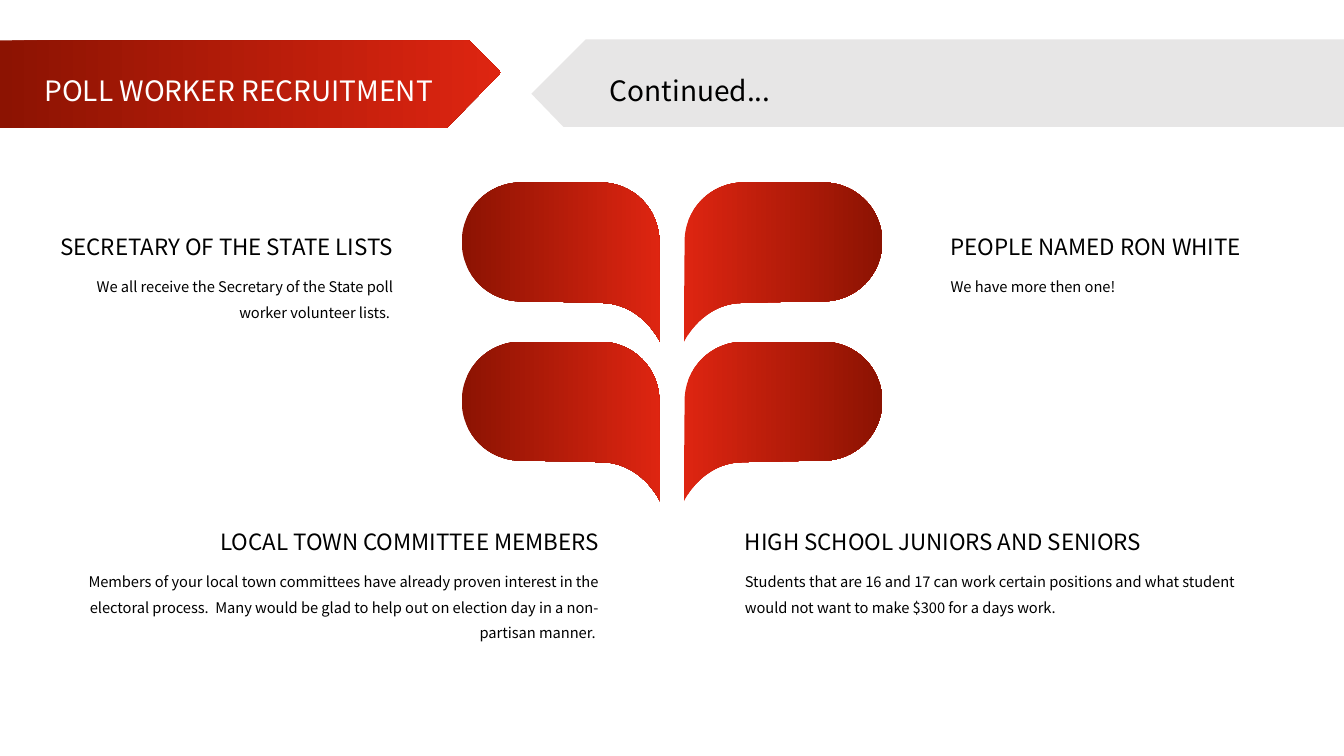
from pptx import Presentation
from pptx.dml.color import RGBColor
from pptx.enum.text import MSO_ANCHOR, MSO_AUTO_SIZE, PP_ALIGN
from pptx.oxml.ns import qn
from pptx.util import Pt
from lxml.etree import SubElement

PX = 9144  # 100 px to the inch
FONT = "Noto Sans CJK SC"
BLACK, WHITE, GREY = "000000", "FFFFFF", "E7E6E6"
DARK_RED, RED = "8C1302", "DE2511"

TITLE_BANNER = [(0, 40), (465, 40), (497, 72), (443, 127), (0, 127)]
SUBTITLE_BANNER = [(581, 39), (1333, 39), (1333, 126), (559, 126), (527, 93)]

PETAL_WIDTH = 197
PETAL_START = (59, 0)
# each curve: two control points and an end point
PETAL_CURVES = [
    [(137, 0), (137, 0), (137, 0)],
    [(170, 0), (196, 26), (196, 59)],
    [(196, 91), (197, 159), (197, 159)],
    [(197, 159), (182, 125), (146, 120)],
    [(141, 119), (59, 118), (59, 118)],
    [(26, 118), (0, 92), (0, 59)],
    [(0, 26), (26, 0), (59, 0)],
]

# side edge, top, heading width, body width, body lines, alignment, heading, body
CAPTIONS = [
    (400, 226, 360, 348, 2, PP_ALIGN.RIGHT, "SECRETARY OF THE STATE LISTS",
     "We all receive the Secretary of the State poll worker volunteer lists. "),
    (933, 226, 352, 322, 1, PP_ALIGN.LEFT, "PEOPLE NAMED RON WHITE",
     "We have more then one!"),
    (729, 519, 475, 526, 2, PP_ALIGN.LEFT, "HIGH SCHOOL JUNIORS AND SENIORS",
     "Students that are 16 and 17 can work certain positions and what student "
     "would not want to make $300 for a days work."),
    (604, 519, 463, 526, 3, PP_ALIGN.RIGHT, "LOCAL TOWN COMMITTEE MEMBERS",
     "Members of your local town committees have already proven interest in the "
     "electoral process.  Many would be glad to help out on election day in a "
     "non-partisan manner. "),
]


def color(value):
    return RGBColor.from_string(value)


def write(shape, box, text, size, ink=BLACK, align=PP_ALIGN.LEFT, spacing=1.0):
    """Place a text shape in its box and format its single paragraph."""
    shape.left, shape.top, shape.width, shape.height = (n * PX for n in box)
    frame = shape.text_frame
    frame.text = text
    frame.word_wrap = True
    frame.auto_size = MSO_AUTO_SIZE.NONE
    frame.vertical_anchor = MSO_ANCHOR.TOP
    para = frame.paragraphs[0]
    para.alignment = align
    para.line_spacing = spacing
    font = para.runs[0].font
    font.name, font.size = FONT, Pt(size)
    font.color.rgb = color(ink)


def add_text(page, box, text, size, **style):
    write(page.shapes.add_textbox(0, 0, 0, 0), box, text, size, **style)


def add_outline(page, points, *colors):
    """Draw a closed shape, filled plainly or with a left-to-right gradient."""
    corners = [(x * PX, y * PX) for x, y in points]
    builder = page.shapes.build_freeform(*corners[0])
    builder.add_line_segments(corners[1:], close=True)
    shape = builder.convert_to_shape()
    shape.shadow.inherit = False
    shape.line.fill.background()
    if len(colors) == 1:
        shape.fill.solid()
        shape.fill.fore_color.rgb = color(colors[0])
        return shape
    shape.fill.gradient()
    shape.fill.gradient_angle = 0
    for position, (stop, value) in enumerate(zip(shape.fill.gradient_stops, colors)):
        stop.position = position
        stop.color.rgb = color(value)
    return shape


def add_petal(page, left, top, mirrored):
    """Draw the petal's end points as an outline, then bend its sides into curves."""
    def place(point):
        x, y = point
        return left + (PETAL_WIDTH - x if mirrored else x), top + y

    ends = [PETAL_START] + [curve[-1] for curve in PETAL_CURVES]
    colors = (RED, DARK_RED) if mirrored else (DARK_RED, RED)
    petal = add_outline(page, [place(end) for end in ends], *colors)
    sides = list(petal._element.iter(qn("a:lnTo")))
    for side, curve in zip(sides, PETAL_CURVES):
        bend = side.makeelement(qn("a:cubicBezTo"))
        for x, y in map(place, curve):
            SubElement(bend, qn("a:pt"), x=str((x - left) * PX), y=str((y - top) * PX))
        side.getparent().replace(side, bend)


def add_petals(page, left, top, gap, pitch):
    for column in range(2):
        for row in range(2):
            add_petal(page, left + column * (PETAL_WIDTH + gap), top + row * pitch,
                      mirrored=column == 1)


def add_header(page):
    add_outline(page, TITLE_BANNER, DARK_RED, RED)
    title = page.shapes.title
    page.shapes._spTree.append(title._element)  # bring in front of the banner
    write(title, (34, 58, 457, 54), "POLL WORKER RECRUITMENT", 20, ink=WHITE, spacing=1.3)
    add_outline(page, SUBTITLE_BANNER, GREY)
    add_text(page, (595, 58, 457, 54), "Continued...", 20, spacing=1.3)


def add_caption(page, edge, top, heading_width, body_width, lines, align, heading, body):
    """Place a heading over its text, both aligned to the given side edge."""
    def start(width):
        return edge - width if align == PP_ALIGN.RIGHT else edge

    add_text(page, (start(heading_width), top, heading_width, 37), heading, 16, align=align)
    add_text(page, (start(body_width), top + 37, body_width, 11 + 25 * lines), body, 10.5,
             align=align, spacing=1.45)


def main():
    deck = Presentation()
    deck.slide_width, deck.slide_height = 1333 * PX, 750 * PX
    page = deck.slides.add_slide(deck.slide_layouts.get_by_name("Title Only"))
    add_header(page)
    add_petals(page, left=458, top=181, gap=23, pitch=158)
    for caption in CAPTIONS:
        add_caption(page, *caption)
    deck.save("out.pptx")


if __name__ == "__main__":
    main()
